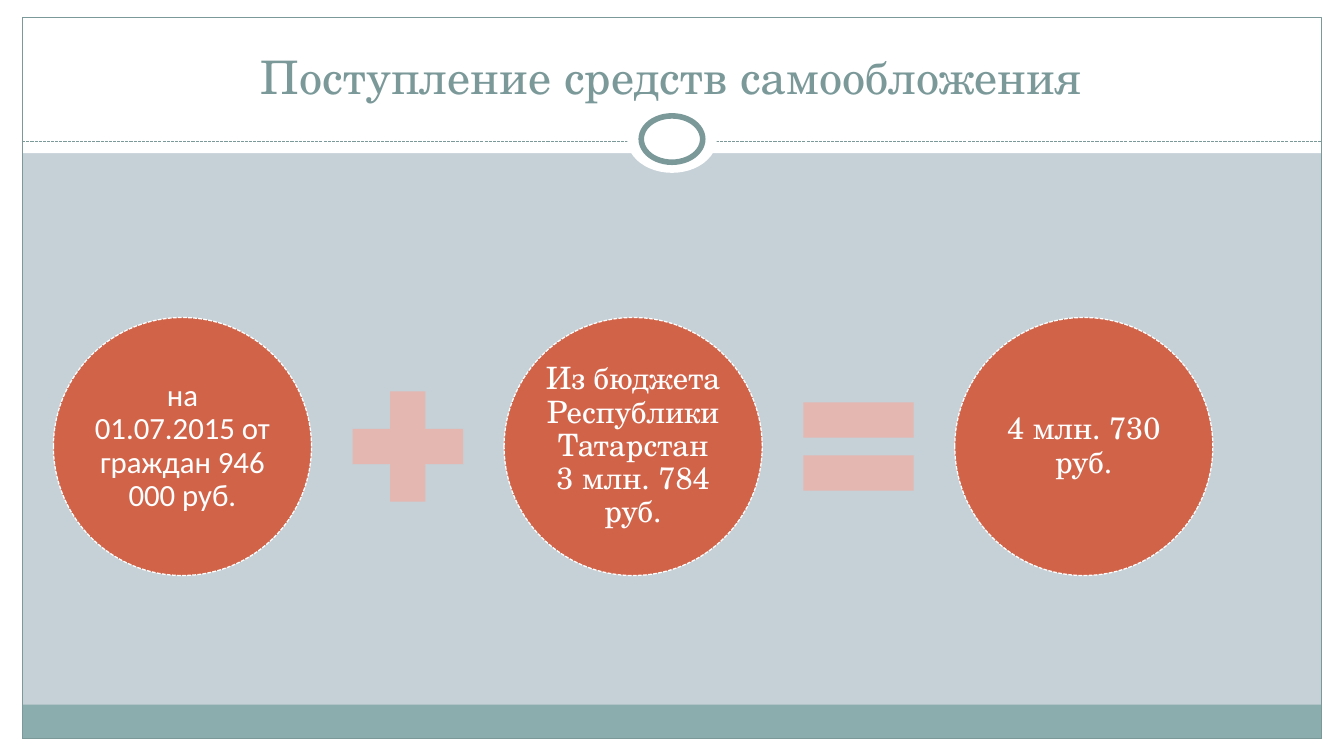
"""Build a slide that adds two incomes into one total."""
import pptx
import pptx.util
import pptx.dml.color
import pptx.enum.dml
import pptx.enum.shapes
import pptx.enum.text
import pptx.oxml.ns
import lxml.etree

Inches, Pt = pptx.util.Inches, pptx.util.Pt
RGBColor = pptx.dml.color.RGBColor
Shape = pptx.enum.shapes.MSO_SHAPE
Anchor = pptx.enum.text.MSO_ANCHOR
CENTER = pptx.enum.text.PP_ALIGN.CENTER
DASH = pptx.enum.dml.MSO_LINE.SQUARE_DOT

WHITE = RGBColor(0xFF, 0xFF, 0xFF)
MIST = RGBColor(0xC5, 0xD1, 0xD7)
SAGE = RGBColor(0x8C, 0xAD, 0xAE)
TEAL = RGBColor(0x7C, 0x99, 0x9A)
RUST = RGBColor(0xD1, 0x63, 0x49)
PINK = RGBColor(0xE5, 0xB7, 0xB1)

SERIF, SANS = "TeX Gyre Schola", "Calibri"
TITLE = "Поступление средств самообложения"
TERMS = [
    ("на 01.07.2015 от граждан 946 000 руб.", SANS),
    ("Из бюджета Республики Татарстан\v3 млн. 784 руб.", SERIF),
    ("4 млн. 730 руб.", SERIF),
]
SIGNS = [Shape.MATH_PLUS, Shape.MATH_EQUAL]

WIDE, HIGH = 13.33, 7.5
SIDE, EDGE = 0.22, 0.17
HEAD, FOOT, RULE = 1.52, 0.34, 1.4
LEFT, MID, STEP = 0.53, 4.43, 4.47
DISC, SIGN = 2.56, 1.49
INNER = WIDE - 2 * SIDE
BASE = HIGH - EDGE

BANDS = [
    (0, BASE, WIDE, EDGE, WHITE),
    (0, 0, WIDE, HEAD, WHITE),
    (0, 0, SIDE, HIGH, WHITE),
    (WIDE - SIDE, 0, SIDE, HIGH, WHITE),
    (SIDE, BASE - FOOT, INNER, FOOT, SAGE),
]
RINGS = [(0.89, 0.67, None, 0), (0.61, 0.46, TEAL, 4)]


def draw(slide, kind, x, y, w, h, fill=None, line=None, width=0.75):
    """Add one flat shape."""
    shape = slide.shapes.add_shape(kind, Inches(x), Inches(y), Inches(w), Inches(h))
    shape.shadow.inherit = False
    for part, color in ((shape.fill, fill), (shape.line.fill, line)):
        if color is None:
            part.background()
        else:
            part.solid()
            part.fore_color.rgb = color
    if line is not None:
        shape.line.width = Pt(width)
    return shape


def write(shape, text, face, size, color, anchor):
    """Put centred text in a shape."""
    frame = shape.text_frame
    frame.text = text
    frame.word_wrap = True
    frame.vertical_anchor = anchor
    para = frame.paragraphs[0]
    para.alignment = CENTER
    para.font.name, para.font.size = face, Pt(size)
    para.font.color.rgb = color
    return frame


def frame_page(slide):
    """Draw the bands, border, rule and rings."""
    for x, y, w, h, color in BANDS:
        draw(slide, Shape.RECTANGLE, x, y, w, h, color)
    draw(slide, Shape.RECTANGLE, SIDE, EDGE, INNER, BASE - EDGE, line=TEAL)
    rule = slide.shapes.add_connector(
        pptx.enum.shapes.MSO_CONNECTOR.STRAIGHT,
        Inches(SIDE), Inches(RULE), Inches(WIDE - SIDE), Inches(RULE))
    rule.line.color.rgb = TEAL
    rule.line.width = Pt(0.75)
    rule.line.dash_style = DASH
    lxml.etree.SubElement(rule.element.spPr, pptx.oxml.ns.qn("a:effectLst"))
    for w, h, color, width in RINGS:
        draw(slide, Shape.OVAL, (WIDE - w) / 2, RULE - 0.02 - h / 2, w, h,
             WHITE, color, width)


def add_title(slide):
    """Format the title and bring it to the front."""
    title = slide.shapes.title
    title.left, title.top = Inches(0.44), Inches(0.25)
    title.width, title.height = Inches(12.44), Inches(0.83)
    write(title, TITLE, SERIF, 33, TEAL, Anchor.BOTTOM)
    slide.shapes.element.append(title.element)


def add_sum(slide):
    """Lay out the discs with a sign in each gap."""
    for i, (text, face) in enumerate(TERMS):
        x = LEFT + i * STEP
        disc = draw(slide, Shape.OVAL, x, MID - DISC / 2, DISC, DISC,
                    RUST, WHITE, 0.9)
        disc.line.dash_style = DASH
        frame = write(disc, text, face, 22, WHITE, Anchor.MIDDLE)
        frame.margin_left = frame.margin_right = Inches(0.03)
        frame.margin_top = frame.margin_bottom = Inches(0.03)
        frame.paragraphs[0].line_spacing = 0.9
        if i < len(SIGNS):
            gap = (STEP - DISC - SIGN) / 2
            draw(slide, SIGNS[i], x + DISC + gap, MID - SIGN / 2, SIGN, SIGN, PINK)


def main():
    """Build and save the slide."""
    deck = pptx.Presentation()
    deck.slide_width, deck.slide_height = Inches(WIDE), Inches(HIGH)
    slide = deck.slides.add_slide(deck.slide_layouts[5])
    slide.background.fill.solid()
    slide.background.fill.fore_color.rgb = MIST
    frame_page(slide)
    add_title(slide)
    add_sum(slide)
    deck.save("out.pptx")


if __name__ == "__main__":
    main()
